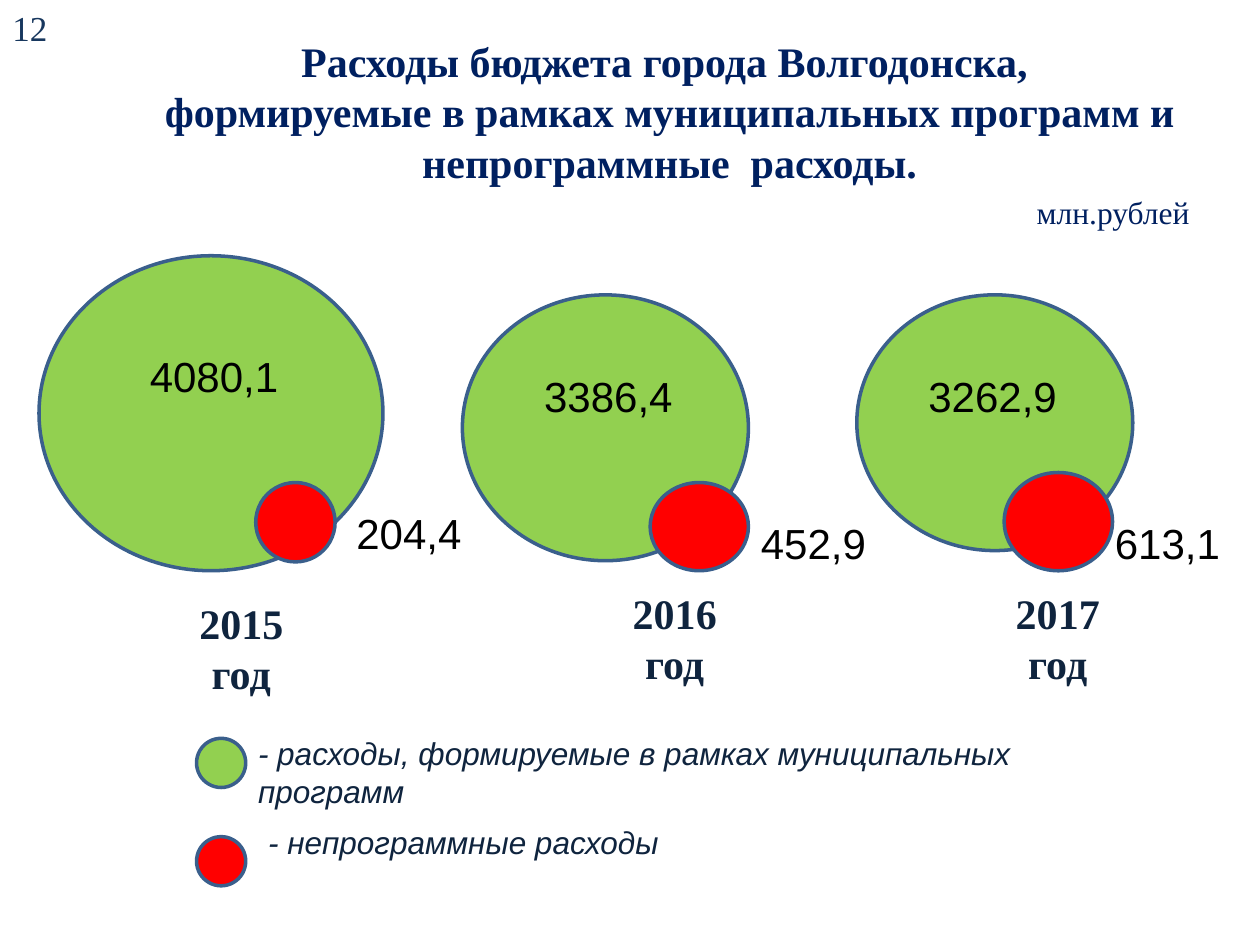
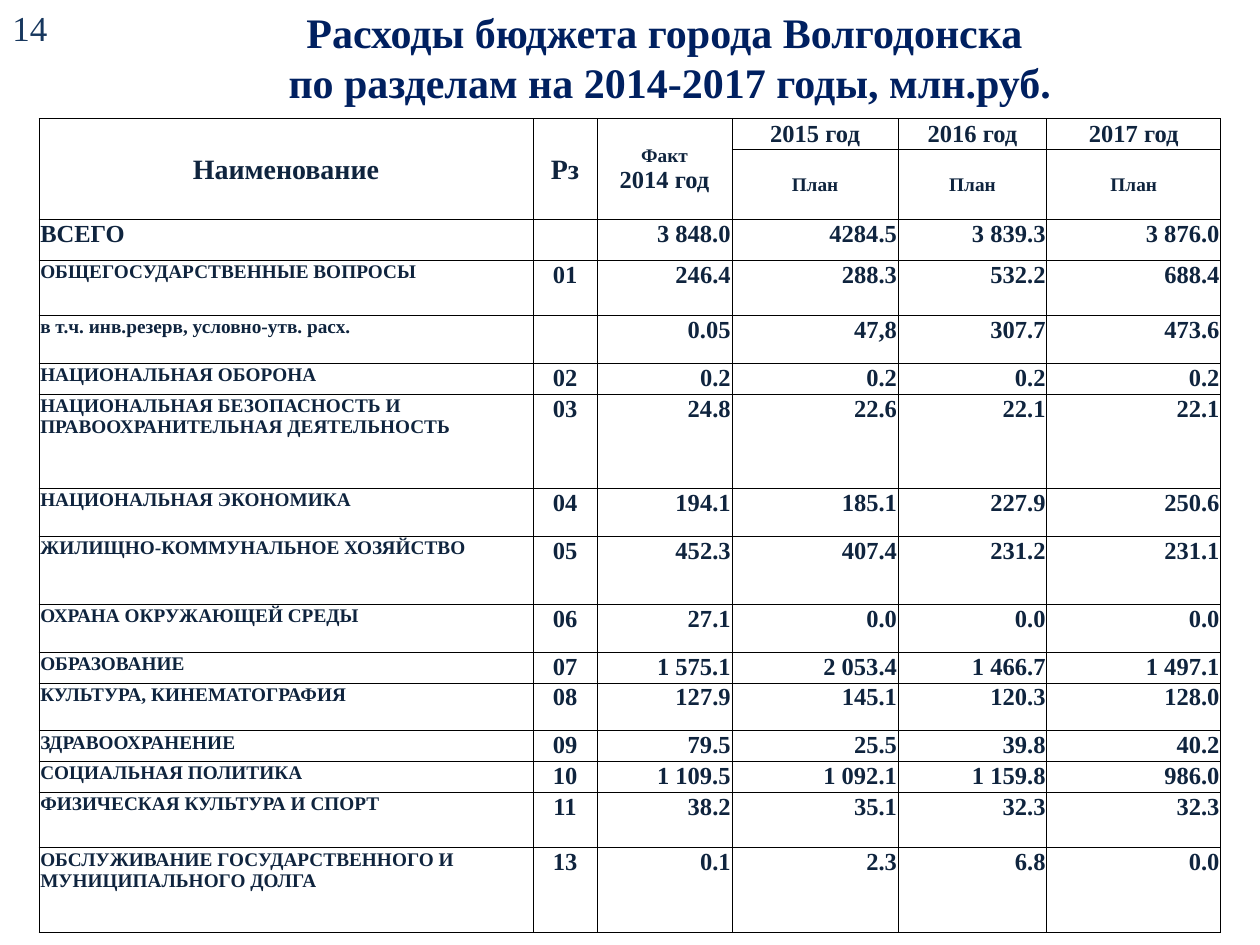
from dataclasses import dataclass
from typing import NamedTuple

from lxml.etree import SubElement
from pptx import Presentation
from pptx.dml.color import RGBColor
from pptx.enum.shapes import MSO_SHAPE as Shape
from pptx.enum.text import MSO_ANCHOR as Anchor, PP_ALIGN as Align
from pptx.oxml.ns import qn
from pptx.util import Inches, Pt

NAVY = RGBColor(0x00, 0x20, 0x60)
PAGE_BLUE = RGBColor(0x17, 0x37, 0x5E)
DARK = RGBColor(0x0F, 0x24, 0x3E)
BLACK = RGBColor(0x00, 0x00, 0x00)
PROGRAM_GREEN = RGBColor(0x92, 0xD0, 0x50)
OTHER_RED = RGBColor(0xFF, 0x00, 0x00)
OUTLINE = RGBColor(0x3A, 0x5F, 0x8C)
SERIF = "Times New Roman"
SANS = "Arial"
TITLE_ONLY = 5


class Box(NamedTuple):
    left: float
    top: float
    width: float
    height: float

    def lengths(self) -> list:
        return [Inches(value) for value in self]


@dataclass(frozen=True)
class Style:
    size: int
    color: RGBColor
    font: str = SERIF
    bold: bool = False
    italic: bool = False
    align: Align = Align.LEFT


TITLE = Style(24, NAVY, bold=True, align=Align.CENTER)
PAGE_NUMBER = Style(20, PAGE_BLUE)
UNIT = Style(18, NAVY)
YEAR = Style(24, DARK, bold=True, align=Align.CENTER)
AMOUNT = Style(24, BLACK, SANS)
LEGEND = Style(18, DARK, SANS, italic=True)


@dataclass(frozen=True)
class YearSpending:
    year: str
    year_box: Box
    program: str
    program_circle: Box
    program_box: Box
    other: str
    other_circle: Box
    other_box: Box


YEARS = [
    YearSpending("2015 год", Box(1.25, 4.69, 1.33, 0.91),
                 "4080,1", Box(0.31, 2.03, 2.73, 2.5), Box(1.09, 2.73, 1.41, 0.5),
                 "204,4", Box(2.03, 3.83, 0.63, 0.63), Box(2.73, 3.98, 1.25, 0.5)),
    YearSpending("2016\nгод", Box(4.77, 4.61, 1.17, 0.91),
                 "3386,4", Box(3.67, 2.34, 2.27, 2.11), Box(4.22, 2.89, 1.41, 0.5),
                 "452,9", Box(5.16, 3.83, 0.78, 0.7), Box(5.94, 4.06, 1.05, 0.5)),
    YearSpending("2017 год", Box(7.73, 4.61, 1.33, 0.91),
                 "3262,9", Box(6.8, 2.34, 2.19, 2.03), Box(7.27, 2.89, 1.41, 0.5),
                 "613,1", Box(7.97, 3.75, 0.86, 0.78), Box(8.75, 4.06, 1.05, 0.5)),
]


class Section(NamedTuple):
    height: float
    name: str
    code: str
    amounts: tuple[str, str, str, str]


SECTIONS = [
    Section(0.32, "ВСЕГО", "", ("3 848.0", "4284.5", "3 839.3", "3 876.0")),
    Section(0.44, "ОБЩЕГОСУДАРСТВЕННЫЕ ВОПРОСЫ", "01", ("246.4", "288.3", "532.2", "688.4")),
    Section(0.38, "в т.ч. инв.резерв, условно-утв. расх.", "", ("0.05", "47,8", "307.7", "473.6")),
    Section(0.24, "НАЦИОНАЛЬНАЯ ОБОРОНА", "02", ("0.2", "0.2", "0.2", "0.2")),
    Section(0.75, "НАЦИОНАЛЬНАЯ БЕЗОПАСНОСТЬ И ПРАВООХРАНИТЕЛЬНАЯ ДЕЯТЕЛЬНОСТЬ", "03",
            ("24.8", "22.6", "22.1", "22.1")),
    Section(0.38, "НАЦИОНАЛЬНАЯ ЭКОНОМИКА", "04", ("194.1", "185.1", "227.9", "250.6")),
    Section(0.54, "ЖИЛИЩНО-КОММУНАЛЬНОЕ ХОЗЯЙСТВО", "05", ("452.3", "407.4", "231.2", "231.1")),
    Section(0.38, "ОХРАНА ОКРУЖАЮЩЕЙ СРЕДЫ", "06", ("27.1", "0.0", "0.0", "0.0")),
    Section(0.24, "ОБРАЗОВАНИЕ", "07", ("1 575.1", "2 053.4", "1 466.7", "1 497.1")),
    Section(0.38, "КУЛЬТУРА, КИНЕМАТОГРАФИЯ", "08", ("127.9", "145.1", "120.3", "128.0")),
    Section(0.24, "ЗДРАВООХРАНЕНИЕ", "09", ("79.5", "25.5", "39.8", "40.2")),
    Section(0.24, "СОЦИАЛЬНАЯ ПОЛИТИКА", "10", ("1 109.5", "1 092.1", "1 159.8", "986.0")),
    Section(0.44, "ФИЗИЧЕСКАЯ КУЛЬТУРА И СПОРТ", "11", ("38.2", "35.1", "32.3", "32.3")),
    Section(0.67, "ОБСЛУЖИВАНИЕ ГОСУДАРСТВЕННОГО И МУНИЦИПАЛЬНОГО ДОЛГА", "13",
            ("0.1", "2.3", "6.8", "0.0")),
]
HEADER_HEIGHTS = [0.24, 0.56]
COLUMN_WIDTHS = [3.92, 0.51, 1.07, 1.32, 1.18, 1.38]


def write(frame, text: str, style: Style) -> None:
    frame.text = text
    for paragraph in frame.paragraphs:
        paragraph.alignment = style.align
        font = paragraph.font
        font.name, font.size = style.font, Pt(style.size)
        font.bold, font.italic = style.bold, style.italic
        font.color.rgb = style.color


def add_text(slide, box: Box, text: str, style: Style) -> None:
    frame = slide.shapes.add_textbox(*box.lengths()).text_frame
    frame.word_wrap = True
    write(frame, text, style)


def add_circle(slide, box: Box, color: RGBColor) -> None:
    circle = slide.shapes.add_shape(Shape.OVAL, *box.lengths())
    circle.shadow.inherit = False
    circle.fill.solid()
    circle.fill.fore_color.rgb = color
    circle.line.color.rgb = OUTLINE
    circle.line.width = Pt(2)


def add_titled_slide(deck, title: str, title_box: Box, number: str):
    slide = deck.slides.add_slide(deck.slide_layouts[TITLE_ONLY])
    heading = slide.shapes.title
    heading.left, heading.top, heading.width, heading.height = title_box.lengths()
    heading.text_frame.vertical_anchor = Anchor.TOP
    write(heading.text_frame, title, TITLE)
    add_text(slide, Box(0, 0, 0.55, 0.44), number, PAGE_NUMBER)
    return slide


def add_borders(cell) -> None:
    properties = cell._tc.get_or_add_tcPr()
    for position, side in enumerate(("a:lnL", "a:lnR", "a:lnT", "a:lnB")):
        border = SubElement(properties, qn(side), w=str(Pt(0.5)))
        fill = SubElement(border, qn("a:solidFill"))
        SubElement(fill, qn("a:srgbClr"), val=str(BLACK))
        properties.insert(position, border)


def fill_cell(cell, text: str, size: int, align: Align, anchor: Anchor = Anchor.TOP) -> None:
    write(cell.text_frame, text, Style(size, DARK, bold=True, align=align))
    cell.vertical_anchor = anchor
    cell.margin_left = cell.margin_right = cell.margin_top = Inches(0.01)
    cell.margin_bottom = 0


def add_header(table) -> None:
    for column, (text, size) in enumerate([("Наименование", 16), ("Рз", 16), ("Факт\n2014 год", 14)]):
        table.cell(0, column).merge(table.cell(1, column))
        fill_cell(table.cell(0, column), text, size, Align.CENTER, Anchor.MIDDLE)
    table.cell(0, 2).text_frame.paragraphs[0].font.size = Pt(11)
    for column, year in enumerate(("2015 год", "2016 год", "2017 год"), start=3):
        fill_cell(table.cell(0, column), year, 14, Align.CENTER, Anchor.MIDDLE)
        fill_cell(table.cell(1, column), "План", 11, Align.CENTER, Anchor.MIDDLE)


def add_sections_table(slide) -> None:
    heights = HEADER_HEIGHTS + [section.height for section in SECTIONS]
    box = Box(0.31, 0.94, sum(COLUMN_WIDTHS), sum(heights))
    table = slide.shapes.add_table(len(heights), len(COLUMN_WIDTHS), *box.lengths()).table
    table.first_row = table.horz_banding = False
    for column, width in zip(table.columns, COLUMN_WIDTHS):
        column.width = Inches(width)
    for row, height in zip(table.rows, heights):
        row.height = Inches(height)
    add_header(table)
    for row, section in enumerate(SECTIONS, start=len(HEADER_HEIGHTS)):
        name_size = 14 if section.name == "ВСЕГО" else 11
        fill_cell(table.cell(row, 0), section.name, name_size, Align.LEFT)
        fill_cell(table.cell(row, 1), section.code, 14, Align.CENTER)
        for column, amount in enumerate(section.amounts, start=2):
            fill_cell(table.cell(row, column), amount, 14, Align.RIGHT)
    for cell in table.iter_cells():
        cell.fill.background()
        add_borders(cell)


def build_program_slide(deck) -> None:
    slide = add_titled_slide(
        deck,
        "Расходы бюджета города Волгодонска, \n"
        "формируемые в рамках муниципальных программ и непрограммные  расходы.",
        Box(0.94, 0.23, 8.75, 1.31), "12")
    add_text(slide, Box(8.13, 1.48, 1.56, 0.4), "млн.рублей", UNIT)
    for spending in YEARS:
        add_circle(slide, spending.program_circle, PROGRAM_GREEN)
        add_circle(slide, spending.other_circle, OTHER_RED)
        add_text(slide, spending.program_box, spending.program, AMOUNT)
        add_text(slide, spending.other_box, spending.other, AMOUNT)
        add_text(slide, spending.year_box, spending.year, YEAR)
    add_circle(slide, Box(1.56, 5.86, 0.39, 0.39), PROGRAM_GREEN)
    add_text(slide, Box(1.95, 5.78, 7.27, 0.71),
             "- расходы, формируемые в рамках муниципальных программ", LEGEND)
    add_circle(slide, Box(1.56, 6.64, 0.39, 0.39), OTHER_RED)
    add_text(slide, Box(2.03, 6.48, 7.27, 0.4), "- непрограммные расходы", LEGEND)


def build_sections_slide(deck) -> None:
    slide = add_titled_slide(
        deck,
        "Расходы бюджета города Волгодонска \nпо разделам на 2014-2017 годы, млн.руб.",
        Box(0.94, 0, 8.75, 0.91), "14")
    add_sections_table(slide)


def main() -> None:
    deck = Presentation()
    deck.slide_width, deck.slide_height = Inches(10), Inches(7.5)
    build_program_slide(deck)
    build_sections_slide(deck)
    deck.save("out.pptx")


if __name__ == "__main__":
    main()
